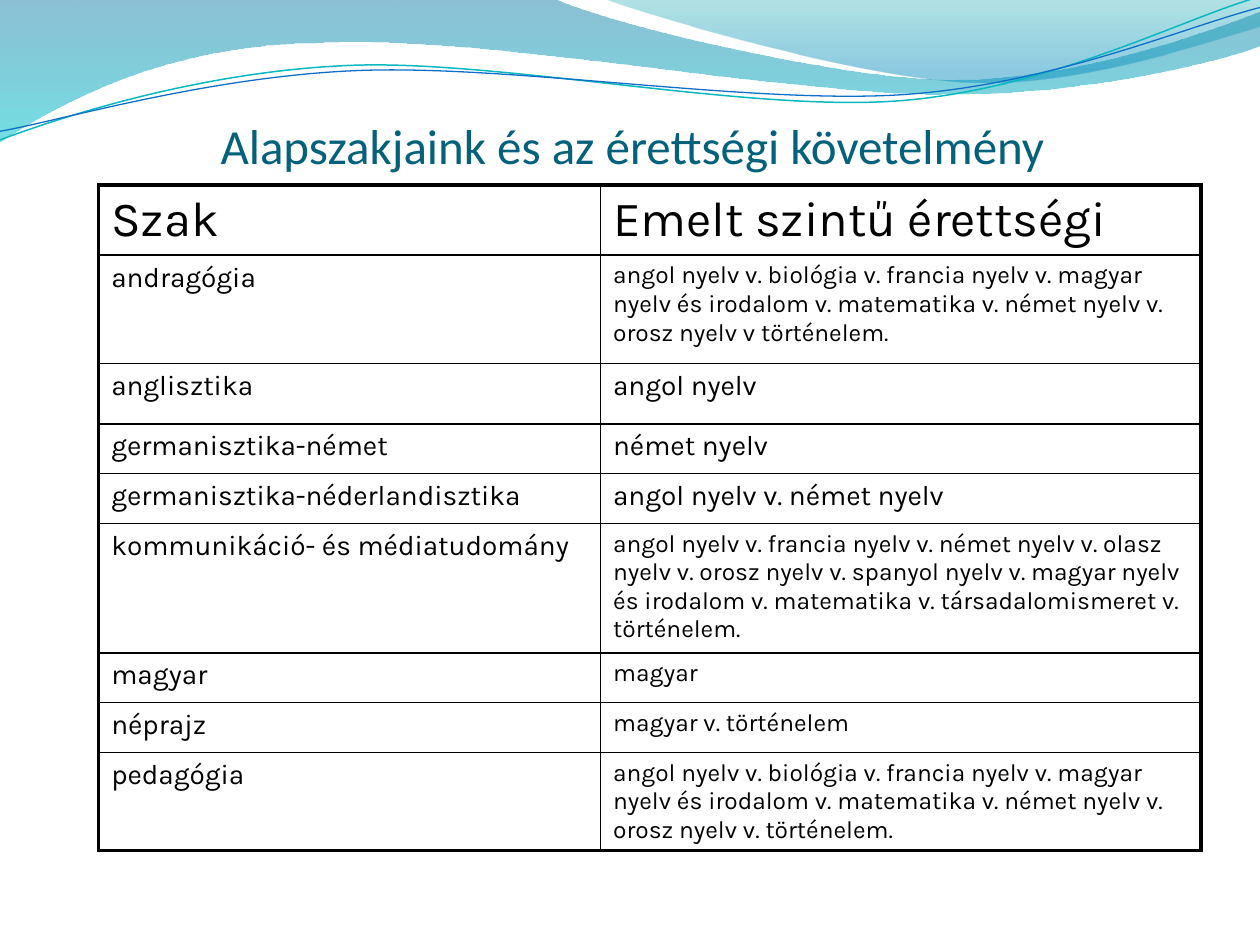
from lxml.etree import SubElement as Sub
from pptx import Presentation
from pptx.dml.color import RGBColor as RGB
from pptx.enum.text import MSO_ANCHOR as Anchor
from pptx.oxml.ns import qn
from pptx.util import Pt

BLACK = RGB(0x00, 0x00, 0x00)
TITLE = RGB(0x04, 0x61, 0x7B)
DEEP = RGB(0x00, 0x74, 0xA1)
CYAN = RGB(0x00, 0xC6, 0xCF)
GREEN = RGB(0x00, 0xA1, 0xA9)
SKY = RGB(0x00, 0x8B, 0xBF)
TEAL = RGB(0x0A, 0xB8, 0xBF)
BLUE = RGB(0x0F, 0x6F, 0xC6)

# Outlines: a pair is a corner, six numbers are a Bézier curve.
BAND = [(0, -0.7), (316.8, -0.7),
        (342.7, 12.2, 478.1, 45.4, 545.8, 45.4),
        (614.2, 45.4, 689.8, 18.7, 720, 6.5), (720.7, 25.9),
        (707.8, 31.7, 626.4, 54.7, 537.1, 54),
        (447.8, 54, 275, 20.2, 185, 24.5),
        (92.9, 25.2, 33.1, 59.8, -0.7, 81.4)]
SHEET = [(344.9, -0.7),
         (366.5, 7.9, 491, 44.6, 553.7, 46.8),
         (616.3, 49.7, 691.9, 23, 720, 15.1), (720, 0)]
UPPER = [(-1.4, 63),
         (33.8, 51.7, 114.1, 29.4, 199.8, 29.9),
         (284.9, 30.3, 425.8, 67.3, 512.4, 64.9),
         (599, 62.4, 676.5, 25.7, 720.2, 15.5)]
LOWER = [(-1.1, 58),
         (32.9, 53.8, 118.3, 32.5, 204.1, 33),
         (290.6, 33.4, 428.9, 63.1, 515.5, 61.4),
         (601.3, 59.6, 678.4, 30.1, 721.4, 21.3)]
TILT = 357.3

COLS = [286.8, 343.2]
# Row height, text size of each column, text of each column
ROWS = [
    (40, 28, 28, "Szak", "Emelt szintű érettségi"),
    (61.9, 16, 14, "andragógia",
     "angol nyelv v. biológia v. francia nyelv v. magyar nyelv és irodalom "
     "v. matematika v. német nyelv v. orosz nyelv v történelem."),
    (34.6, 16, 16, "anglisztika", "angol nyelv"),
    (28.4, 16, 16, "germanisztika-német", "német nyelv"),
    (28.4, 16, 16, "germanisztika-néderlandisztika",
     "angol nyelv v. német nyelv"),
    (74.2, 16, 14, "kommunikáció- és médiatudomány",
     "angol nyelv v. francia nyelv v. német nyelv v. olasz nyelv v. orosz "
     "nyelv v. spanyol nyelv v. magyar nyelv és irodalom v. matematika "
     "v. társadalomismeret v. történelem."),
    (28.4, 16, 14, "magyar", "magyar"),
    (28.4, 16, 14, "néprajz", "magyar v. történelem"),
    (56, 16, 14, "pedagógia",
     "angol nyelv v. biológia v. francia nyelv v. magyar nyelv és irodalom "
     "v. matematika v. német nyelv v. orosz nyelv v. történelem."),
]


def draw(slide, box, path, close):
    """Build the outline from straight parts, then join triples to curves."""
    left, top = box[:2]
    pts = [(Pt(left + x), Pt(top + y)) for seg in path
           for x, y in zip(seg[::2], seg[1::2])]
    form = slide.shapes.build_freeform(*pts[0], scale=1.0)
    form.add_line_segments(pts[1:], close=close)
    shape = form.convert_to_shape()
    shape.shadow.inherit = False
    lines = iter(list(shape._element.iter(qn("a:lnTo"))))
    for seg in path[1:]:
        line = next(lines)
        if len(seg) == 6:
            line.tag_name = None
            curve = line.makeelement(qn("a:cubicBezTo"))
            line.addprevious(curve)
            for part in (line, next(lines), next(lines)):
                curve.append(part[0])
                part.getparent().remove(part)
    return shape


def add_waves(slide, box):
    fills = [(BAND, (0, DEEP, 45), (1, CYAN, 55)),
             (SHEET, (0, GREEN, 30), (0.8, SKY, 45))]
    for path, *stops in fills:
        shape = draw(slide, box, path, True)
        shape.line.fill.background()
        shape.fill.gradient()
        shape.fill.gradient_angle = 270
        for stop, (pos, color, _) in zip(shape.fill.gradient_stops, stops):
            stop.position = pos
            stop.color.rgb = color
        tints = shape._element.spPr.iter(qn("a:srgbClr"))
        for tint, (_, _, alpha) in zip(tints, stops):
            Sub(tint, qn("a:alpha"), val=str(alpha * 1000))
    for path, color, width in [(UPPER, TEAL, 0.85), (LOWER, BLUE, 0.75)]:
        shape = draw(slide, box, path, False)
        shape.rotation = TILT
        shape.fill.background()
        shape.line.color.rgb = color
        shape.line.width = Pt(width)


def write(para, text, font, size, color):
    run = para.add_run()
    run.text = text
    run.font.name = font
    run.font.size = Pt(size)
    run.font.color.rgb = color


def add_title(slide, box):
    frame = slide.shapes.add_textbox(*map(Pt, box)).text_frame
    frame.word_wrap = True
    frame.vertical_anchor = Anchor.BOTTOM
    frame.margin_left = frame.margin_right = frame.margin_bottom = 0
    write(frame.paragraphs[0], "Alapszakjaink és az érettségi követelmény",
          "Calibri", 28, TITLE)


def rule(cell, edges):
    """Draw the cell borders; edges maps each side to whether it is outer."""
    props = cell._tc.get_or_add_tcPr()
    for side, outer in edges.items():
        line = Sub(props, qn("a:ln" + side), w=str(Pt(2.25 if outer else 1)))
        fill = Sub(line, qn("a:solidFill"))
        Sub(fill, qn("a:srgbClr"), val=str(BLACK))


def add_grid(slide, box):
    frame = slide.shapes.add_table(len(ROWS), len(COLS), *map(Pt, box))
    table = frame.table
    table.first_row = table.horz_banding = False
    for col, width in zip(table.columns, COLS):
        col.width = Pt(width)
    for r, (height, *sizes, left, right) in enumerate(ROWS):
        table.rows[r].height = Pt(height)
        for c, (size, text) in enumerate(zip(sizes, (left, right))):
            cell = table.cell(r, c)
            cell.margin_bottom = Pt(2)
            rule(cell, {"L": c == 0, "R": c == len(COLS) - 1,
                        "T": r == 0, "B": r == len(ROWS) - 1})
            cell.fill.background()
            write(cell.text_frame.paragraphs[0], text, "Karla", size, BLACK)


def main():
    deck = Presentation()
    deck.slide_width, deck.slide_height = Pt(720), Pt(540)
    slide = deck.slides.add_slide(deck.slide_layouts[6])
    add_waves(slide, (0, 0, 720, 82))
    add_title(slide, (126, 24, 594, 75.5))
    add_grid(slide, (56.4, 105.8, sum(COLS), sum(row[0] for row in ROWS)))
    deck.save("out.pptx")


if __name__ == "__main__":
    main()
